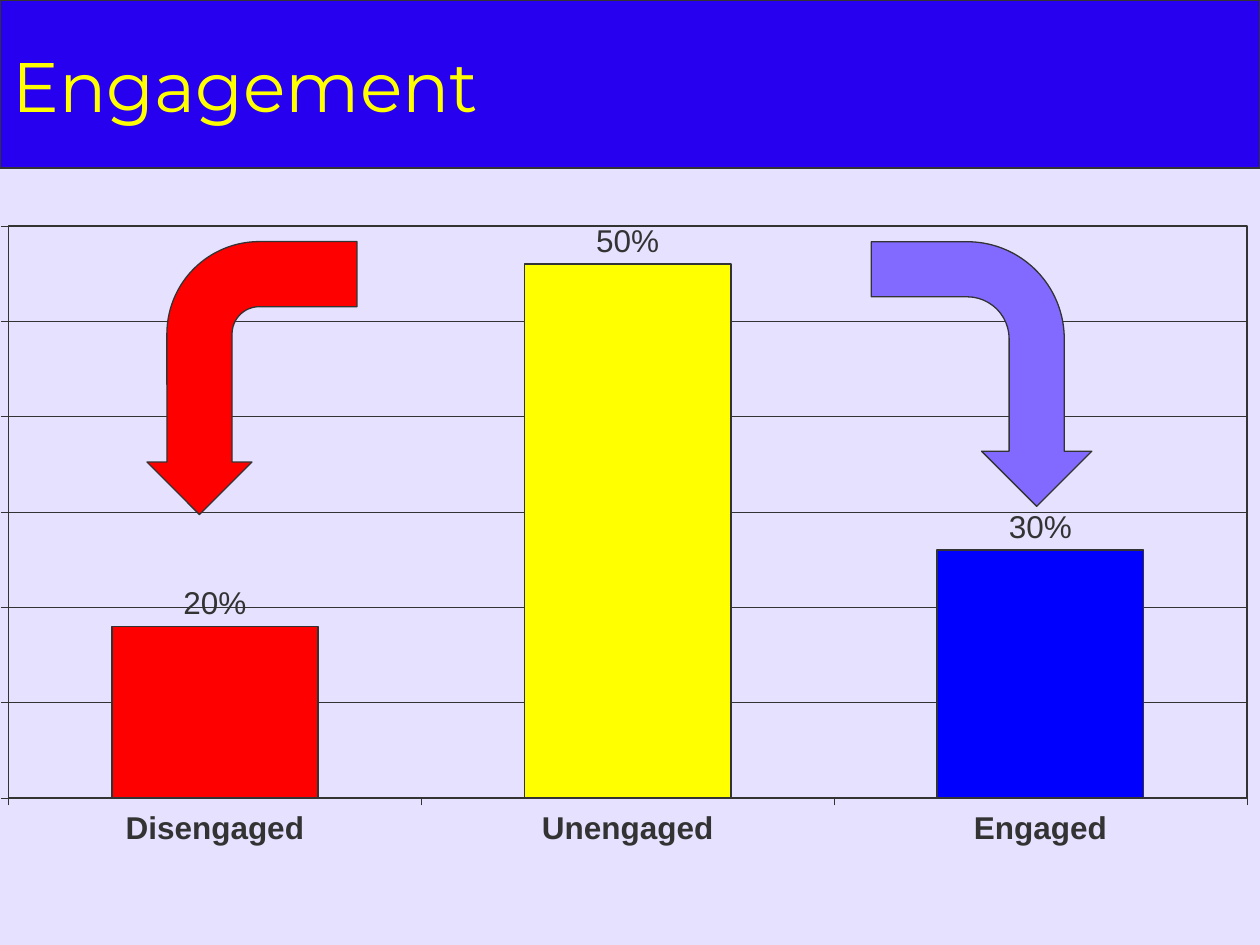
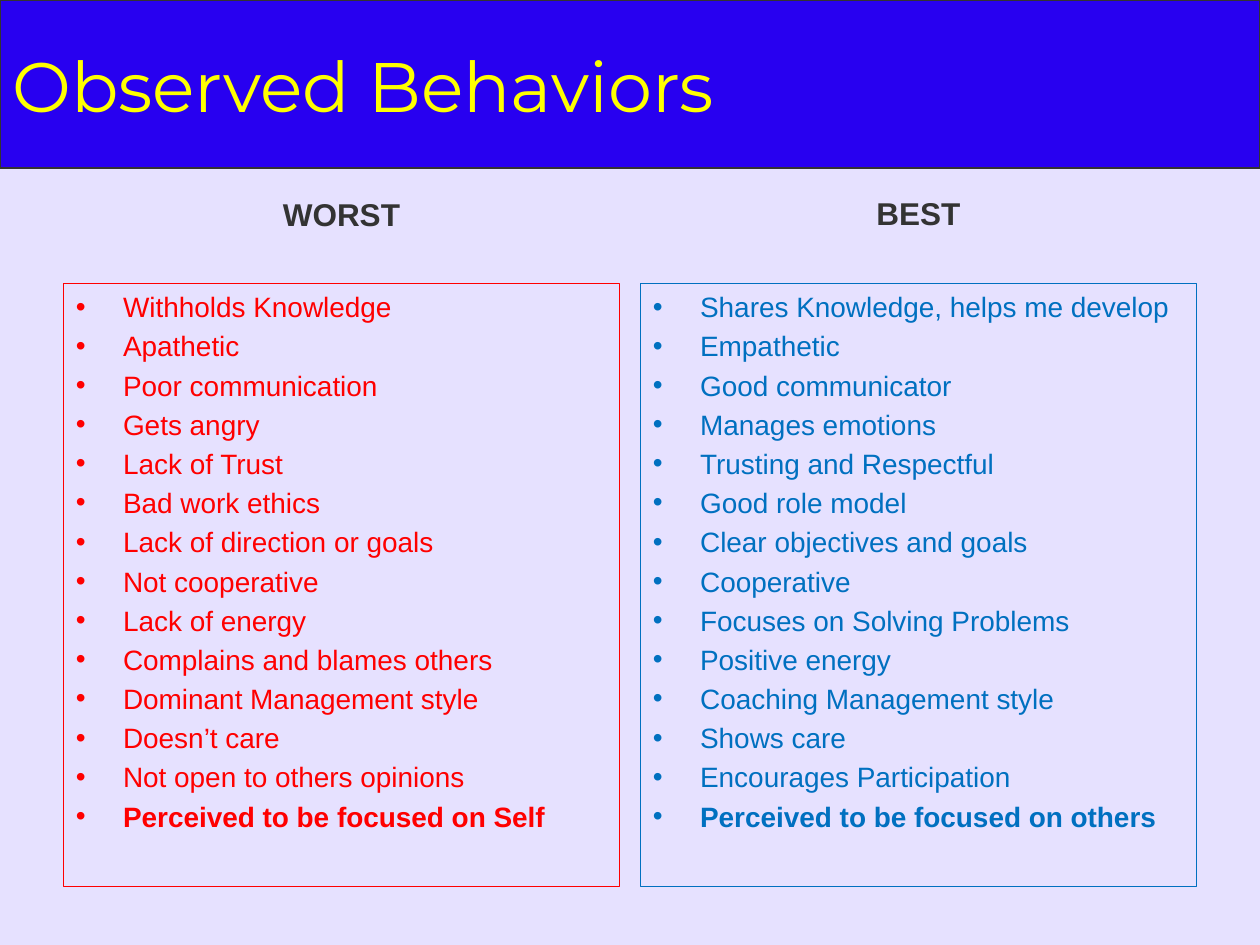
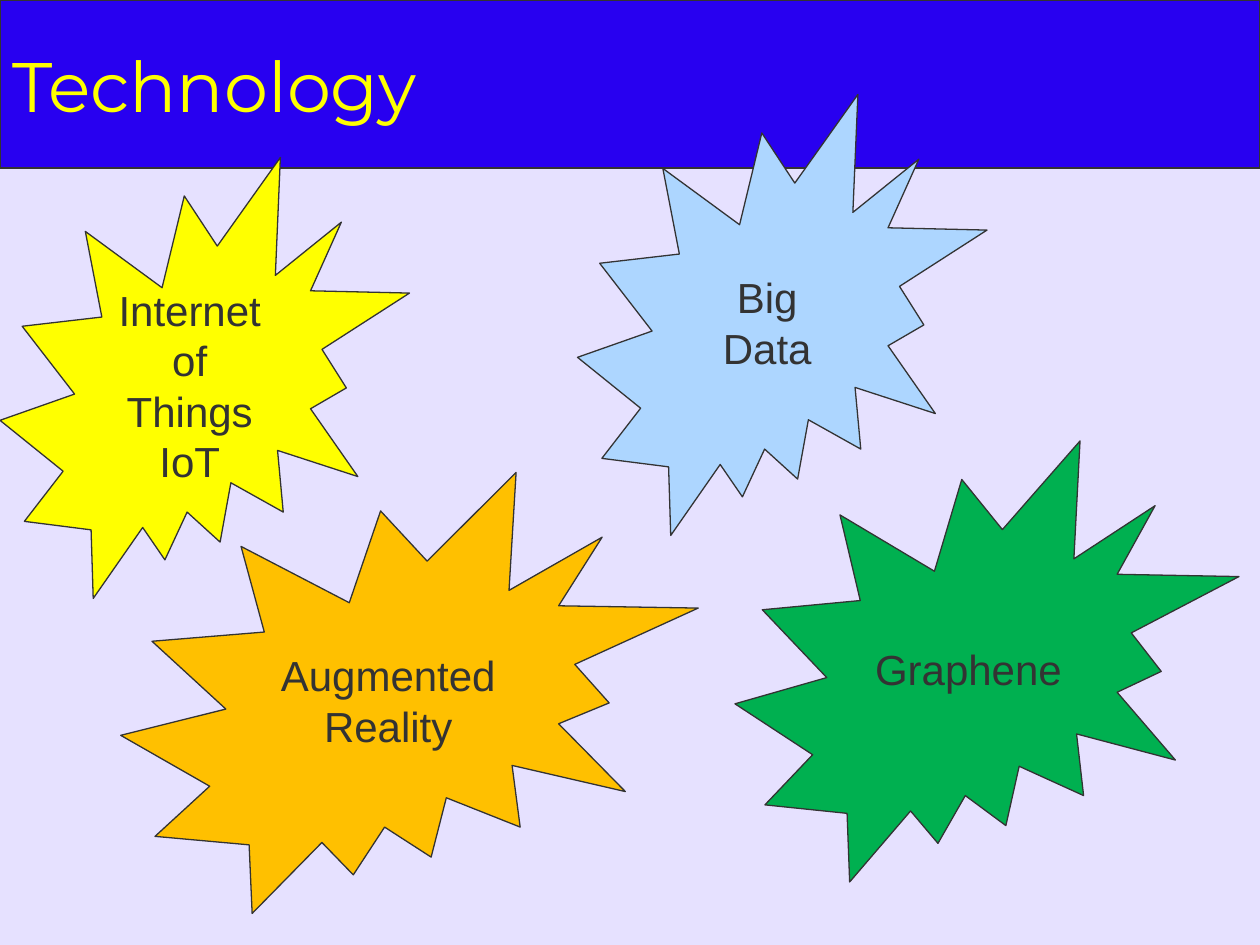
"""Build three slides on engagement, observed behaviors and technology."""
from lxml.etree import SubElement
from pptx import Presentation
from pptx.chart.data import CategoryChartData
from pptx.dml.color import RGBColor
from pptx.enum.chart import XL_CHART_TYPE, XL_LABEL_POSITION, XL_TICK_LABEL_POSITION, XL_TICK_MARK
from pptx.enum.shapes import MSO_SHAPE
from pptx.enum.text import MSO_ANCHOR, PP_ALIGN
from pptx.oxml import parse_xml
from pptx.oxml.ns import nsdecls, qn
from pptx.util import Pt

LAVENDER = RGBColor(0xE6, 0xE1, 0xFF)
BAND_BLUE = RGBColor(0x28, 0x00, 0xF0)
DARK = RGBColor(0x33, 0x33, 0x33)
SILVER = RGBColor(0xC0, 0xC0, 0xC0)
YELLOW = RGBColor(0xFF, 0xFF, 0x00)
RED = RGBColor(0xFF, 0x00, 0x00)
BLUE = RGBColor(0x00, 0x00, 0xFF)
VIOLET = RGBColor(0x82, 0x69, 0xFF)
STEEL = RGBColor(0x00, 0x70, 0xC0)
SKY = RGBColor(0xAD, 0xD6, 0xFF)
ORANGE = RGBColor(0xFF, 0xC0, 0x00)
GREEN = RGBColor(0x00, 0xB0, 0x50)

BODY_FONT, TITLE_FONT = "Arial", "Montserrat"
WIDTH, HEIGHT, BAND_HEIGHT = 720, 540, 96
PERCENT = "0%"

BARS = [
    ("Disengaged", 0.18, "20%", RED),
    ("Unengaged", 0.56, "50%", YELLOW),
    ("Engaged", 0.26, "30%", BLUE),
]
CHART_AREA = (-4.5, 119.75, 724.32, 393.84)
PLOT = {"x": 0.013, "y": 0.024, "w": 0.977, "h": 0.83}
ARROWS = [
    ((485.28, 150.75, 151.2, 126), VIOLET, (0.25, 0.25, 0.25, 0.44), False),
    ((66, 156, 156, 120), RED, (0.31, 0.25, 0.25, 0.44), True),
]
COLUMNS = [
    ("WORST", 36.25, 108, RED, [
        "Withholds Knowledge", "Apathetic", "Poor communication", "Gets angry",
        "Lack of Trust", "Bad work ethics", "Lack of direction or goals",
        "Not cooperative", "Lack of energy", "Complains and blames others",
        "Dominant Management style", "Doesn’t care", "Not open to others opinions",
        "Perceived to be focused on Self",
    ]),
    ("BEST", 366, 107.28, STEEL, [
        "Shares Knowledge, helps me develop", "Empathetic", "Good communicator",
        "Manages emotions", "Trusting and Respectful", "Good role model",
        "Clear objectives and goals", "Cooperative", "Focuses on Solving Problems",
        "Positive energy", "Coaching Management style", "Shows care",
        "Encourages Participation", "Perceived to be focused on others",
    ]),
]
COLUMN_WIDTH = 317.75
BURSTS = [
    (["Internet of Things", "IoT"], (0, 90, 234, 252), YELLOW),
    (["Big Data"], (330, 54, 234, 252), SKY),
    (["Augmented Reality"], (69, 270, 330, 252), ORANGE),
    (["Graphene"], (420, 252, 288, 252), GREEN),
]


def points(area):
    return [Pt(length) for length in area]


def style_font(font, size, color, bold=False, name=BODY_FONT):
    font.size, font.bold, font.name = Pt(size), bold, name
    font.color.rgb = color


def style_fill(fill, color):
    fill.solid()
    fill.fore_color.rgb = color


def style_line(line, width, color=DARK):
    line.color.rgb = color
    line.width = Pt(width)


def add_outlined(page, kind, area, fill=None, line=DARK):
    shape = page.shapes.add_shape(kind, *points(area))
    shape.shadow.inherit = False
    if fill is None:
        shape.fill.background()
    else:
        style_fill(shape.fill, fill)
    style_line(shape.line, 0.75, line)
    return shape


def write(shape, lines, size, color, align, anchor, bold=False, name=BODY_FONT):
    frame = shape.text_frame
    frame.word_wrap = True
    frame.vertical_anchor = anchor
    for index, line in enumerate(lines):
        para = frame.add_paragraph() if index else frame.paragraphs[0]
        para.text = line
        para.alignment = align
        style_font(para.font, size, color, bold, name)
    return frame.paragraphs


def add_page(deck, title):
    page = deck.slides.add_slide(deck.slide_layouts[6])
    style_fill(page.background.fill, LAVENDER)
    add_outlined(page, MSO_SHAPE.RECTANGLE, (0, 0, WIDTH, BAND_HEIGHT), BAND_BLUE)
    box = page.shapes.add_textbox(*points((0, 9.25, WIDTH, 77.76)))
    write(box, [title], 40, YELLOW, PP_ALIGN.LEFT, MSO_ANCHOR.MIDDLE, name=TITLE_FONT)
    return page


def frame_plot(chart):
    area = chart._chartSpace.chart.plotArea
    for old in area.findall(qn("c:layout")):
        area.remove(old)
    layout = parse_xml(f"<c:layout {nsdecls('c')}><c:manualLayout/></c:layout>")
    settings = {"layoutTarget": "inner", "xMode": "edge", "yMode": "edge", **PLOT}
    for tag, value in settings.items():
        SubElement(layout[0], qn(f"c:{tag}")).set("val", str(value))
    area.insert(0, layout)
    area.append(parse_xml(
        f"<c:spPr {nsdecls('c', 'a')}><a:noFill/><a:ln w='{Pt(1)}'><a:solidFill>"
        f"<a:srgbClr val='{DARK}'/></a:solidFill></a:ln></c:spPr>"))


def add_engagement_chart(page):
    data = CategoryChartData(number_format=PERCENT)
    data.categories = [name for name, *_ in BARS]
    data.add_series("Series 1", [value for _, value, *_ in BARS])
    chart = page.shapes.add_chart(
        XL_CHART_TYPE.COLUMN_CLUSTERED, *points(CHART_AREA), data).chart
    chart.has_legend = chart.has_title = False
    style_font(chart.font, 18, DARK, True)
    plot = chart.plots[0]
    plot.gap_width = 100
    plot.vary_by_categories = False

    for axis in (chart.category_axis, chart.value_axis):
        axis.major_tick_mark = XL_TICK_MARK.OUTSIDE
        style_line(axis.format.line, 0.25)
    style_font(chart.category_axis.tick_labels.font, 18, DARK, True)
    values = chart.value_axis
    values.minimum_scale, values.maximum_scale, values.major_unit = 0, 0.6, 0.1
    values.tick_labels.number_format = PERCENT
    values.tick_labels.number_format_is_linked = False
    values.tick_label_position = XL_TICK_LABEL_POSITION.NONE
    style_line(values.major_gridlines.format.line, 0.25)

    series = plot.series[0]
    style_fill(series.format.fill, SILVER)
    style_line(series.format.line, 1)
    labels = series.data_labels
    labels.show_value = True
    labels.number_format = PERCENT
    labels.number_format_is_linked = False
    labels.position = XL_LABEL_POSITION.OUTSIDE_END
    style_font(labels.font, 18, DARK, True)
    for index, (_, _, label, color) in enumerate(BARS):
        bar = series.points[index]
        style_fill(bar.format.fill, color)
        style_line(bar.format.line, 1)
        para = bar.data_label.text_frame.paragraphs[0]
        span = para.add_run()
        span.text = label
        style_font(span.font, 18, DARK)
        bar.data_label.position = XL_LABEL_POSITION.OUTSIDE_END
    frame_plot(chart)


def add_bent_arrow(page, area, color, adjustments, flipped):
    arrow = add_outlined(page, MSO_SHAPE.BENT_ARROW, area, color)
    arrow.rotation = 90
    for index, value in enumerate(adjustments):
        arrow.adjustments[index] = value
    if flipped:
        arrow._element.spPr.xfrm.set("flipV", "1")


def add_bullet(para):
    properties = para._p.get_or_add_pPr()
    properties.set("marL", str(Pt(27)))
    properties.set("indent", str(-Pt(27)))
    for markup in (f"buFont {nsdecls('a')} typeface='{BODY_FONT}'",
                   f"buChar {nsdecls('a')} char='•'"):
        properties.insert_element_before(
            parse_xml(f"<a:{markup}/>"), "a:tabLst", "a:defRPr", "a:extLst")


def add_behaviors(page, left, color, behaviors):
    box = add_outlined(page, MSO_SHAPE.RECTANGLE, (left, 162, COLUMN_WIDTH, 344.5), line=color)
    paras = write(box, behaviors, 16, color, PP_ALIGN.LEFT, MSO_ANCHOR.TOP)
    for index, para in enumerate(paras):
        if index:
            para.space_before = Pt(3.2)
        add_bullet(para)
    paras[-1].font.bold = True


def main():
    deck = Presentation()
    deck.slide_width, deck.slide_height = Pt(WIDTH), Pt(HEIGHT)

    page = add_page(deck, "Engagement")
    add_engagement_chart(page)
    for arrow in ARROWS:
        add_bent_arrow(page, *arrow)

    page = add_page(deck, "Observed Behaviors")
    for heading, left, top, color, behaviors in COLUMNS:
        add_behaviors(page, left, color, behaviors)
        box = page.shapes.add_textbox(*points((left, top, COLUMN_WIDTH, 28.8)))
        write(box, [heading], 18, DARK, PP_ALIGN.CENTER, MSO_ANCHOR.TOP, bold=True)

    page = add_page(deck, "Technology")
    for lines, area, color in BURSTS:
        burst = add_outlined(page, MSO_SHAPE.EXPLOSION2, area, color)
        write(burst, lines, 24, DARK, PP_ALIGN.CENTER, MSO_ANCHOR.MIDDLE)

    deck.save("out.pptx")


if __name__ == "__main__":
    main()
